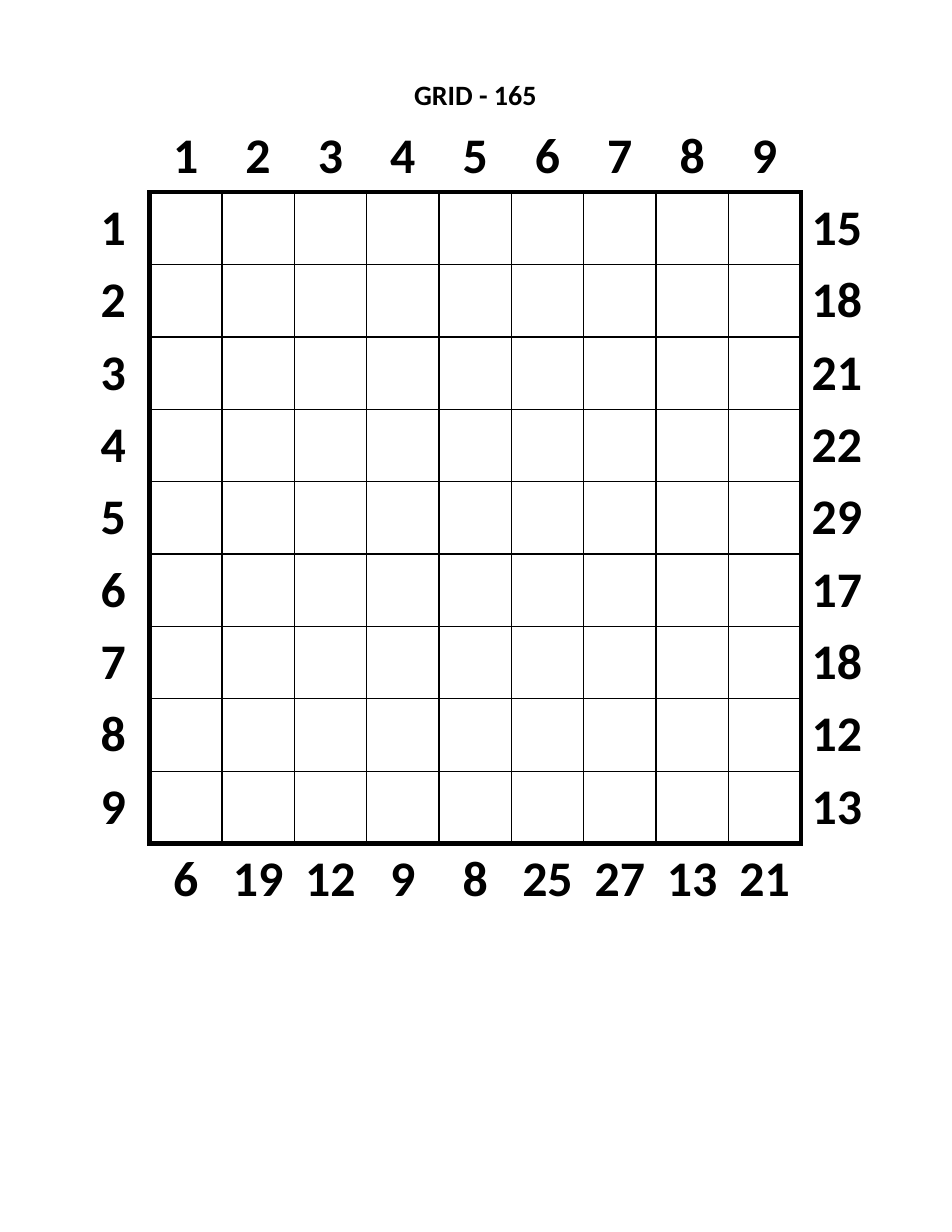
import lxml.etree
import pptx
import pptx.dml.color
import pptx.enum.text
import pptx.oxml.ns
import pptx.util

Cm = pptx.util.Cm
BLACK = pptx.dml.color.RGBColor(0, 0, 0)
WHITE = pptx.dml.color.RGBColor(255, 255, 255)
FONT = "Calibri"
PLAIN_STYLE = "{2D5ABB26-0587-4C30-8999-92F81FD0307C}"
SIZE = 9
LAST = SIZE + 1
LEFT, SIDE = Cm(1.75), Cm(18.06)
ROW_SUMS = [15, 18, 21, 22, 29, 17, 18, 12, 13]
COLUMN_SUMS = [6, 19, 12, 9, 8, 25, 27, 13, 21]


def write_text(text_frame, text, size):
    text_frame.text = text
    paragraph = text_frame.paragraphs[0]
    paragraph.alignment = pptx.enum.text.PP_ALIGN.CENTER
    font = paragraph.runs[0].font
    font.name, font.size, font.bold = FONT, pptx.util.Pt(size), True
    font.color.rgb = BLACK


def add_title(slide, text):
    box = slide.shapes.add_textbox(LEFT, Cm(1.75), SIDE, Cm(0.76))
    frame = box.text_frame
    frame.word_wrap = True
    frame.margin_left = frame.margin_right = frame.margin_top = frame.margin_bottom = 0
    write_text(frame, text, 18)


def add_border(cell, tag, points):
    properties = cell._tc.get_or_add_tcPr()
    qualified = pptx.oxml.ns.qn
    line = lxml.etree.SubElement(properties, qualified(tag), w=str(pptx.util.Pt(points)))
    fill = lxml.etree.SubElement(line, qualified("a:solidFill"))
    lxml.etree.SubElement(fill, qualified("a:srgbClr"), val=str(BLACK))


def draw_borders(cell, row, column):
    sides = (("a:lnL", column, row), ("a:lnR", column + 1, row),
             ("a:lnT", row, column), ("a:lnB", row + 1, column))
    for tag, edge, lane in sides:
        if 1 <= edge <= LAST and 1 <= lane <= SIZE:
            add_border(cell, tag, 3 if edge in (1, LAST) else 1)


def label_for(row, column):
    if 1 <= column <= SIZE:
        return {0: str(column), LAST: str(COLUMN_SUMS[column - 1])}.get(row, "")
    if 1 <= row <= SIZE:
        return str(row) if column == 0 else str(ROW_SUMS[row - 1])
    return ""


def format_cell(cell, row, column):
    draw_borders(cell, row, column)
    cell.fill.solid()
    cell.fill.fore_color.rgb = WHITE
    cell.margin_left = cell.margin_right = cell.margin_top = cell.margin_bottom = 0
    cell.vertical_anchor = pptx.enum.text.MSO_ANCHOR.MIDDLE
    label = label_for(row, column)
    if label:
        write_text(cell.text_frame, label, 32)


def add_grid(slide):
    count = SIZE + 2
    table = slide.shapes.add_table(count, count, LEFT, Cm(2.72), SIDE, SIDE).table
    table.first_row = table.horz_banding = False
    style = table._tbl.tblPr.find(pptx.oxml.ns.qn("a:tableStyleId"))
    style.text = PLAIN_STYLE
    for row in range(count):
        for column in range(count):
            format_cell(table.cell(row, column), row, column)


def main():
    """Build the number puzzle page with its row and column sums."""
    presentation = pptx.Presentation()
    presentation.slide_width, presentation.slide_height = Cm(21.59), Cm(27.94)
    slide = presentation.slides.add_slide(presentation.slide_layouts[6])
    add_title(slide, "GRID - 165")
    add_grid(slide)
    presentation.save("out.pptx")


if __name__ == "__main__":
    main()
